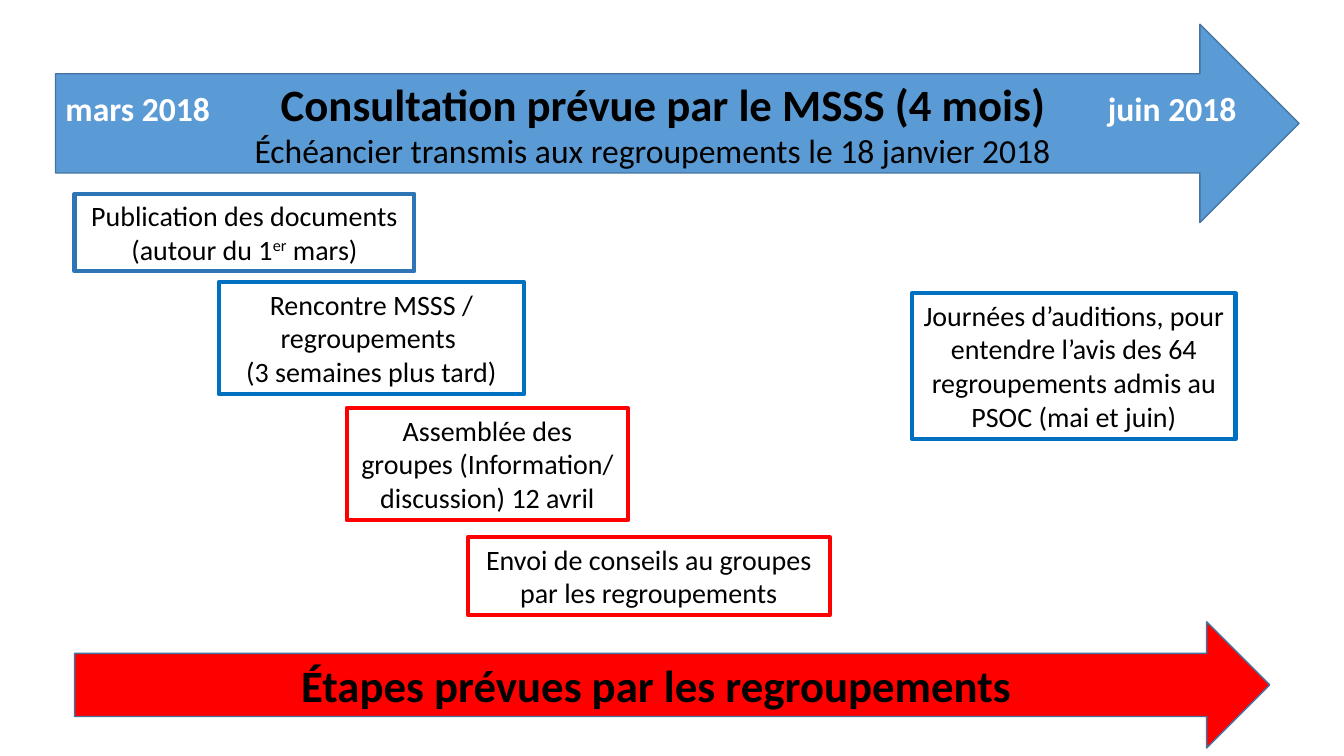
from lxml.etree import SubElement as Sub
from pptx import Presentation
from pptx.dml.color import RGBColor
from pptx.enum.shapes import MSO_SHAPE as Form
from pptx.enum.text import MSO_ANCHOR as Anchor, MSO_AUTO_SIZE as Fit, PP_ALIGN as Align
from pptx.oxml.ns import qn
from pptx.util import Cm, Pt

BLACK = RGBColor(0, 0, 0)
WHITE = RGBColor(255, 255, 255)
RED = RGBColor(255, 0, 0)
SKY = RGBColor(0x5B, 0x9B, 0xD5)
STEEL = RGBColor(0x43, 0x73, 0x9E)
NAVY = RGBColor(0x2E, 0x75, 0xB6)
BLUE = RGBColor(0, 0x70, 0xC0)


def write(para, text, size=20, color=BLACK, bold=False, raised=False, font="Calibri"):
    run = para.add_run()
    run.text = text
    run.font.name = font
    run.font.size = Pt(size)
    run.font.bold = bold
    run.font.color.rgb = color
    if raised:
        run.font._element.set("baseline", "30000")


class Board:
    def __init__(self, slide, thin=1, thick=3):
        self.slide = slide
        self.thin = thin
        self.thick = thick

    def edge(self, shape, color, width):
        shape.line.color.rgb = color
        shape.line.width = Pt(width)

    def arrow(self, left, top, width, height, fill):
        shape = self.slide.shapes.add_shape(
            Form.RIGHT_ARROW, Cm(left), Cm(top), Cm(width), Cm(height))
        shape.shadow.inherit = False
        shape.fill.solid()
        shape.fill.fore_color.rgb = fill
        self.edge(shape, STEEL, self.thin)
        frame = shape.text_frame
        frame.word_wrap = True
        frame.vertical_anchor = Anchor.MIDDLE
        return frame

    def step(self, left, top, width, height, color, *lines):
        box = self.slide.shapes.add_textbox(Cm(left), Cm(top), Cm(width), Cm(height))
        self.edge(box, color, self.thick)
        frame = box.text_frame
        frame.word_wrap = True
        frame.auto_size = Fit.SHAPE_TO_FIT_TEXT
        for spot, line in enumerate(lines):
            para = frame.add_paragraph() if spot else frame.paragraphs[0]
            para.alignment = Align.CENTER
            for part, text in enumerate(line.split("^")):
                write(para, text, raised=part == 1)

    def tabs(self, para, *stops):
        para.alignment = Align.LEFT
        row = Sub(para._p.get_or_add_pPr(), qn("a:tabLst"))
        for place, kind in stops:
            Sub(row, qn("a:tab"), pos=str(Cm(place)), algn=kind)


def main():
    deck = Presentation()
    deck.slide_width = Cm(33.87)
    deck.slide_height = Cm(19.05)
    board = Board(deck.slides.add_slide(deck.slide_layouts[6]))

    goal = board.arrow(1.88, 15.67, 30.12, 3.18, RED).paragraphs[0]
    goal.alignment = Align.CENTER
    write(goal, "Étapes prévues par les regroupements", size=32, bold=True)

    board.step(1.88, 4.88, 8.56, 1.96, NAVY,
               "Publication des documents (autour du 1^er^ mars)")
    board.step(5.51, 7.11, 7.7, 2.82, BLUE,
               "Rencontre MSSS / regroupements ", "(3 semaines plus tard)")
    board.step(22.99, 7.39, 8.15, 3.68, BLUE,
               "Journées d’auditions, pour entendre l’avis des 64 "
               "regroupements admis au PSOC (mai et juin)")
    board.step(11.79, 13.54, 9.12, 1.96, RED,
               "Envoi de conseils au groupes par les regroupements")
    board.step(8.74, 10.29, 7.09, 2.82, RED,
               "Assemblée des groupes (Information/ discussion) 12 avril")

    frame = board.arrow(1.4, 0.61, 31.34, 5, SKY)
    head = frame.paragraphs[0]
    board.tabs(head, (15.07, "ctr"), (26.27, "l"))
    write(head, "mars 2018\t", size=24, color=WHITE, bold=True)
    write(head, "Consultation prévue par le MSSS (4 mois)\t", size=32, bold=True)
    write(head, "juin 2018", size=24, color=WHITE, bold=True)
    note = frame.add_paragraph()
    note.alignment = Align.CENTER
    write(note, "Échéancier transmis aux regroupements le 18 janvier 2018", size=24)

    deck.save("out.pptx")


if __name__ == "__main__":
    main()
